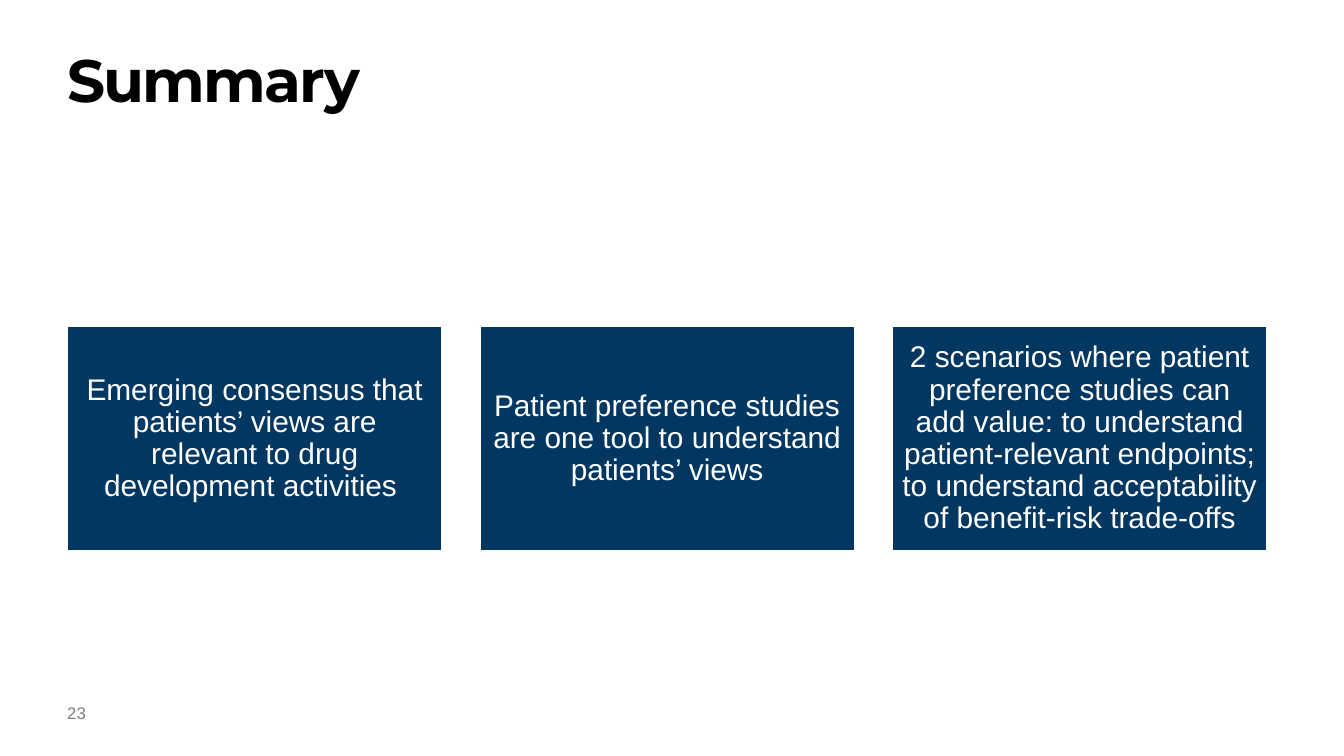
"""Build the summary slide with three cards."""
from dataclasses import dataclass

from pptx import Presentation
from pptx.dml.color import RGBColor as Color
from pptx.enum.shapes import MSO_SHAPE as Form
from pptx.enum.text import MSO_ANCHOR as Anchor
from pptx.enum.text import MSO_AUTO_SIZE as Fit
from pptx.enum.text import PP_ALIGN as Align
from pptx.slide import Slide
from pptx.text.text import TextFrame, _Run as Run
from pptx.util import Inches, Pt


@dataclass(frozen=True)
class Style:
    font: str
    size: float
    color: Color
    bold: bool = False


@dataclass(frozen=True)
class Theme:
    navy: Color = Color(0x02, 0x37, 0x61)
    white: Color = Color(0xFF, 0xFF, 0xFF)
    title: Style = Style("Montserrat", 32, Color(0, 0, 0), True)
    card: Style = Style("Arial", 16, Color(0xFF, 0xFF, 0xFF))
    page: Style = Style("Arial", 9, Color(0x7F, 0x7F, 0x7F))


@dataclass(frozen=True)
class Box:
    left: float
    top: float
    width: float
    height: float

    def sizes(self) -> list[int]:
        return [Inches(n) for n in (self.left, self.top, self.width, self.height)]


THEME = Theme()
LEFT, WIDTH = 0.5, 2.79
STEP = WIDTH * 1.1
CARDS = (
    "Emerging consensus that patients’ views are relevant to drug development activities ",
    "Patient preference studies are one tool to understand patients’ views",
    "2 scenarios where patient preference studies can add value: to understand "
    "patient-relevant endpoints; to understand acceptability of benefit-risk trade-offs",
)


def write(frame: TextFrame, text: str, style: Style, inset: float = 0,
          anchor: Anchor = Anchor.TOP, align: Align = Align.LEFT,
          lead: float = 0.9) -> Run:
    frame.text = text
    frame.word_wrap = True
    frame.auto_size = Fit.NONE
    frame.vertical_anchor = anchor
    frame.margin_left = frame.margin_right = Inches(inset)
    frame.margin_top = frame.margin_bottom = Inches(inset)
    para = frame.paragraphs[0]
    para.alignment = align
    para.line_spacing = lead
    run = para.runs[0]
    run.font.name = style.font
    run.font.size = Pt(style.size)
    run.font.bold = style.bold
    run.font.color.rgb = style.color
    return run


def add_title(slide: Slide, text: str) -> None:
    title = slide.shapes.title
    title.left, title.top, title.width, title.height = Box(LEFT, 0.38, 9, 1.05).sizes()
    run = write(title.text_frame, text, THEME.title)
    run._r.get_or_add_rPr().set("spc", "-100")


def add_card(slide: Slide, box: Box, text: str) -> None:
    card = slide.shapes.add_shape(Form.RECTANGLE, *box.sizes())
    card.shadow.inherit = False
    card.fill.solid()
    card.fill.fore_color.rgb = THEME.navy
    card.line.color.rgb = THEME.white
    card.line.width = Pt(1)
    write(card.text_frame, text, THEME.card, 0.07, Anchor.MIDDLE, Align.CENTER)


def add_page(slide: Slide, text: str) -> None:
    page = slide.shapes.add_textbox(*Box(LEFT, 5.23, 0.25, 0.25).sizes())
    write(page.text_frame, text, THEME.page, lead=1.0)


def main() -> None:
    deck = Presentation()
    deck.slide_width, deck.slide_height = Inches(10), Inches(10 * 9 / 16)
    slide = deck.slides.add_slide(deck.slide_layouts[5])
    add_title(slide, "Summary")
    add_page(slide, "23")
    for i, text in enumerate(CARDS):
        add_card(slide, Box(LEFT + i * STEP, 2.43, WIDTH, 1.67), text)
    deck.save("out.pptx")


if __name__ == "__main__":
    main()
